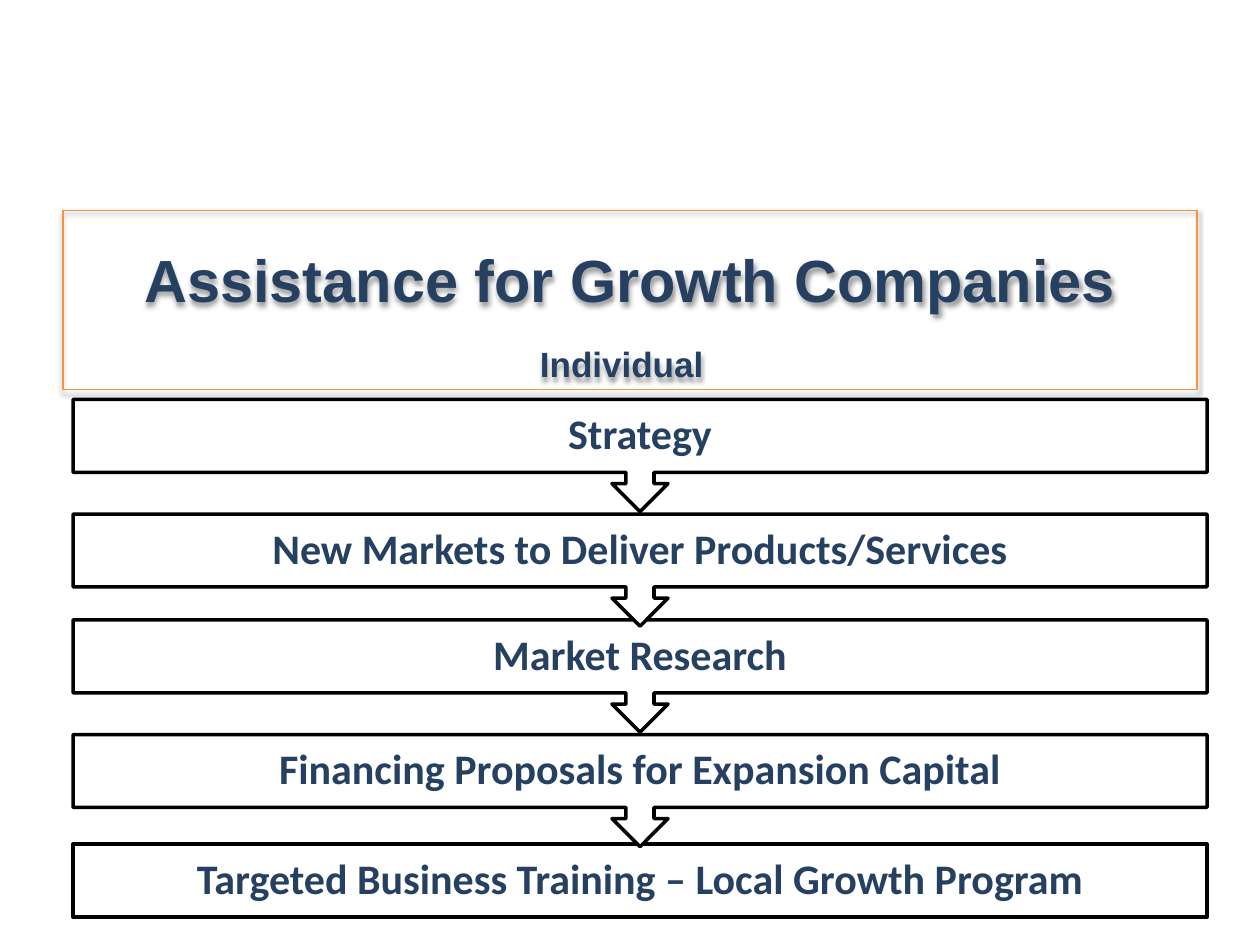
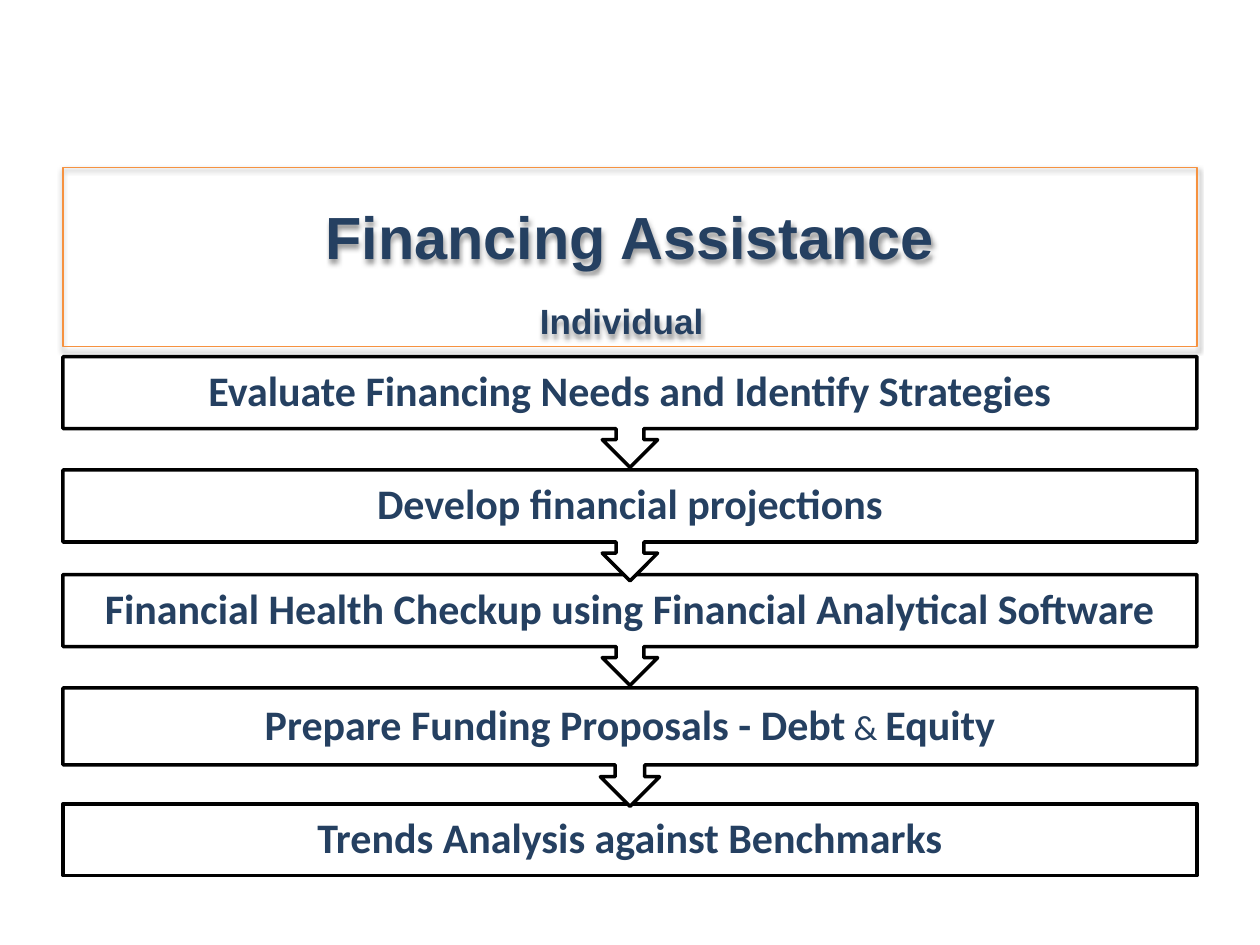
from dataclasses import dataclass

from lxml import etree
from pptx import Presentation
from pptx.dml.color import RGBColor
from pptx.enum.shapes import MSO_SHAPE
from pptx.enum.text import MSO_ANCHOR, MSO_AUTO_SIZE, PP_ALIGN
from pptx.oxml.ns import qn
from pptx.util import Inches, Pt

RECT, CALLOUT = MSO_SHAPE.RECTANGLE, MSO_SHAPE.DOWN_ARROW_CALLOUT
CENTER = PP_ALIGN.CENTER
MIDDLE, BOTTOM = MSO_ANCHOR.MIDDLE, MSO_ANCHOR.BOTTOM
NO_FIT = MSO_AUTO_SIZE.NONE
TITLE_ONLY = 5


@dataclass(frozen=True)
class Theme:
    navy: RGBColor = RGBColor(0x25, 0x40, 0x61)
    orange: RGBColor = RGBColor(0xF6, 0x92, 0x40)
    white: RGBColor = RGBColor(0xFF, 0xFF, 0xFF)
    black: RGBColor = RGBColor(0, 0, 0)
    title_font: str = "Arial"
    step_font: str = "Calibri"
    title_size: int = 34
    subtitle_size: int = 20
    step_size: int = 24
    small_size: int = 20


class Deck:
    """Holds the style and the current slide."""

    def __init__(self, theme):
        self.theme = theme
        self.prs = Presentation()
        self.prs.slide_width, self.prs.slide_height = Inches(10), Inches(7.5)
        self.s = None

    def new_slide(self):
        self.s = self.prs.slides.add_slide(self.prs.slide_layouts[TITLE_ONLY])

    def style(self, r, font, size, bold=True):
        r.font.name, r.font.size, r.font.bold = font, Pt(size), bold
        r.font.color.rgb = self.theme.navy

    def shadow(self, sp):
        effects = etree.SubElement(sp._element.spPr, qn("a:effectLst"))
        outer = etree.SubElement(effects, qn("a:outerShdw"), blurRad=str(Pt(3.1)),
                                 dist=str(Pt(1.6)), dir="5400000", rotWithShape="0")
        color = etree.SubElement(outer, qn("a:srgbClr"), val=str(self.theme.black))
        etree.SubElement(color, qn("a:alpha"), val="38000")

    def title(self, top, title, subtitle):
        t, sp = self.theme, self.s.shapes.title
        sp.left, sp.top = Inches(0.5), Inches(top)
        sp.width, sp.height = Inches(9), Inches(1.42)
        sp.fill.background()
        sp.line.color.rgb, sp.line.width = t.orange, Pt(0.75)
        self.shadow(sp)
        tf = sp.text_frame
        tf.text = f"{title}\n{subtitle}"
        tf.word_wrap, tf.auto_size = True, NO_FIT
        tf.vertical_anchor, tf.margin_bottom = BOTTOM, 0
        for p, size in zip(tf.paragraphs, (t.title_size, t.subtitle_size)):
            p.alignment = CENTER
            p.space_before = Pt(0)
            self.style(p.runs[0], t.title_font, size)
        # The closing space gives the subtitle line the height of the title
        p.space_before = Pt(2)
        r = p.add_run()
        r.text = " "
        self.style(r, t.title_font, t.title_size)

    def step(self, shape, left, top, height, parts):
        t = self.theme
        sp = self.s.shapes.add_shape(shape, Inches(left), Inches(top),
                                     Inches(9), Inches(height))
        sp.shadow.inherit = False
        sp.fill.solid()
        sp.fill.fore_color.rgb = t.white
        sp.line.color.rgb, sp.line.width = t.black, Pt(2)
        tf = sp.text_frame
        tf.word_wrap, tf.vertical_anchor = True, MIDDLE
        tf.margin_left = tf.margin_right = Inches(0.19)
        tf.margin_top = tf.margin_bottom = 0
        p = tf.paragraphs[0]
        p.alignment, p.line_spacing = CENTER, 0.9
        for text in parts:
            r = p.add_run()
            r.text = text
            joiner = text == " & "
            self.style(r, t.step_font, t.small_size if joiner else t.step_size, not joiner)

    def steps(self, left, box_height, rows):
        # Drawn from the last up, so each arrow lies over the next box
        for i, (top, height, *parts) in reversed(list(enumerate(rows, 1))):
            if i == len(rows):
                self.step(RECT, left, top, box_height, parts)
            else:
                self.step(CALLOUT, left, top, height, parts)


def main():
    deck = Deck(Theme())

    # Growth companies
    deck.new_slide()
    deck.title(1.67, "Assistance for Growth Companies", "Individual")
    deck.steps(0.58, 0.58, [
        (3.17, 0.89, "Strategy"),
        (4.08, 0.89, "New Markets to Deliver Products/Services"),
        (4.92, 0.89, "Market Research"),
        (5.83, 0.89, "Financing Proposals for Expansion Capital"),
        (6.7, 0.58, "Targeted Business Training – Local Growth Program"),
    ])

    # Financing
    deck.new_slide()
    deck.title(1.33, "Financing Assistance", "Individual")
    deck.steps(0.5, 0.57, [
        (2.83, 0.88, "Evaluate Financing Needs and Identify Strategies"),
        (3.73, 0.88, "Develop financial projections"),
        (4.56, 0.88, "Financial Health Checkup using Financial Analytical Software"),
        (5.46, 0.94, "Prepare Funding Proposals - Debt", " & ", "Equity"),
        (6.38, 0.57, "Trends Analysis against Benchmarks"),
    ])

    deck.prs.save("out.pptx")


if __name__ == "__main__":
    main()
